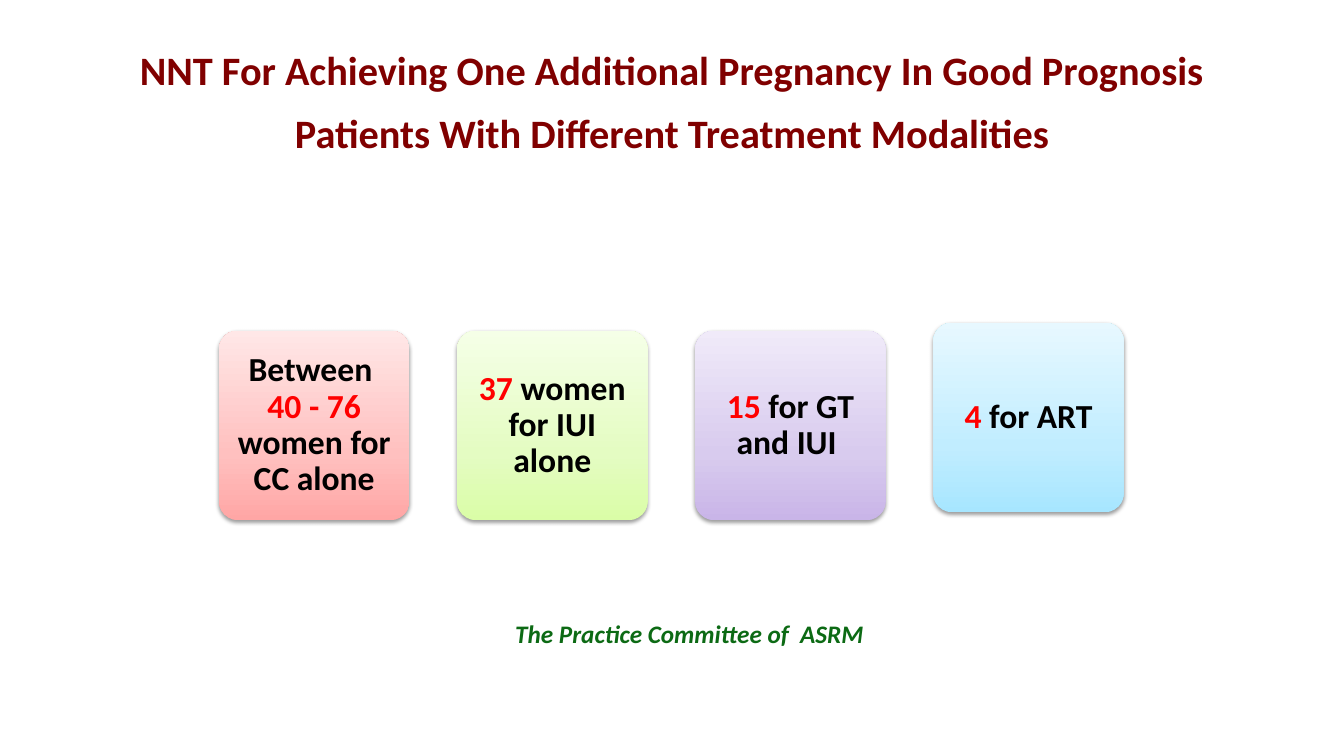
from copy import deepcopy

from lxml.etree import SubElement
from pptx import Presentation
from pptx.dml.color import RGBColor as RGB
from pptx.enum.shapes import MSO_SHAPE as SHAPE
from pptx.enum.text import MSO_ANCHOR as ANCHOR, PP_ALIGN as ALIGN
from pptx.oxml.ns import qn
from pptx.util import Cm, Pt

COLORS = {
    "title": "800000",
    "text": "000000",
    "number": "FF0000",
    "source": "0C6A14",
    "shadow": "000000",
}

TREATMENTS = [
    ("Between  ", "40 - 76", " women for CC alone", 8.33, ("FFA6A5", "FFC0BF", "FFE7E7")),
    ("", "37", " women for IUI alone", 8.33, ("DAFDA7", "E4FCC2", "F5FFE7")),
    ("", "15", " for GT and IUI ", 8.33, ("C9B5E8", "D8CBEE", "F0EAF9")),
    ("", "4", " for ART", 8.13, ("A7E6FF", "C1EDFF", "E7F8FF")),
]


class SlideBuilder:
    font = "Calibri"
    stops = (0, 0.35, 1)

    def __init__(self, slide):
        self.slide = slide

    def style(self, p, size, spacing):
        p.alignment = ALIGN.CENTER
        p.line_spacing = spacing
        p.font.name = self.font
        p.font.size = Pt(size)
        p.font.bold = True

    def text(self, box, text, size, color, spacing=1.0, italic=None):
        tf = self.slide.shapes.add_textbox(*map(Cm, box)).text_frame
        tf.word_wrap = True
        tf.vertical_anchor = ANCHOR.MIDDLE
        p = tf.paragraphs[0]
        p.text = text
        self.style(p, size, spacing)
        p.font.italic = italic
        p.font.color.rgb = RGB.from_string(COLORS[color])

    def card(self, box, runs, gradient):
        sp = self.slide.shapes.add_shape(SHAPE.ROUNDED_RECTANGLE, *map(Cm, box))
        sp.adjustments[0] = 0.1
        sp.line.fill.background()
        self.gradient(sp, gradient)
        self.shadow(sp)
        tf = sp.text_frame
        tf.word_wrap = True
        tf.vertical_anchor = ANCHOR.MIDDLE
        tf.margin_left = tf.margin_right = Cm(0.13)
        tf.margin_top = tf.margin_bottom = Cm(0.08)
        p = tf.paragraphs[0]
        self.style(p, 24, 0.9)
        for text, color in runs:
            if text:
                r = p.add_run()
                r.text = text
                r.font.color.rgb = RGB.from_string(COLORS[color])

    def gradient(self, sp, colors):
        sp.fill.gradient()
        sp.fill.gradient_angle = 90
        stop_list = sp._element.spPr.find(qn("a:gradFill")).find(qn("a:gsLst"))
        stop_list.append(deepcopy(stop_list[-1]))
        for stop, position, color in zip(sp.fill.gradient_stops, self.stops, colors):
            stop.position = position
            stop.color.rgb = RGB.from_string(color)

    def shadow(self, sp):
        sp.shadow.inherit = False
        effects = sp._element.spPr.find(qn("a:effectLst"))
        shadow = SubElement(effects, qn("a:outerShdw"), blurRad=str(Pt(3.1)),
                            dist=str(Pt(1.6)), dir="5400000", rotWithShape="0")
        color = SubElement(shadow, qn("a:srgbClr"), val=COLORS["shadow"])
        SubElement(color, qn("a:alpha"), val="38000")


def main():
    prs = Presentation()
    prs.slide_width, prs.slide_height = Cm(33.87), Cm(19.05)
    s = SlideBuilder(prs.slides.add_slide(prs.slide_layouts[6]))

    s.text((1.7, 0.76, 30.48, 3.18),
           "NNT For Achieving One Additional Pregnancy In Good Prognosis "
           "Patients With Different Treatment Modalities", 28.8, "title", spacing=1.3)

    left, pitch, width, height = 5.52, 6, 4.8, 4.78
    for i, (before, number, after, top, gradient) in enumerate(TREATMENTS):
        runs = [(before, "text"), (number, "number"), (after, "text")]
        s.card((left + i * pitch, top, width, height), runs, gradient)

    s.text((9.73, 15.44, 15.29, 1.02), "The Practice Committee of  ASRM",
           18, "source", italic=True)

    prs.save("out.pptx")


if __name__ == "__main__":
    main()
